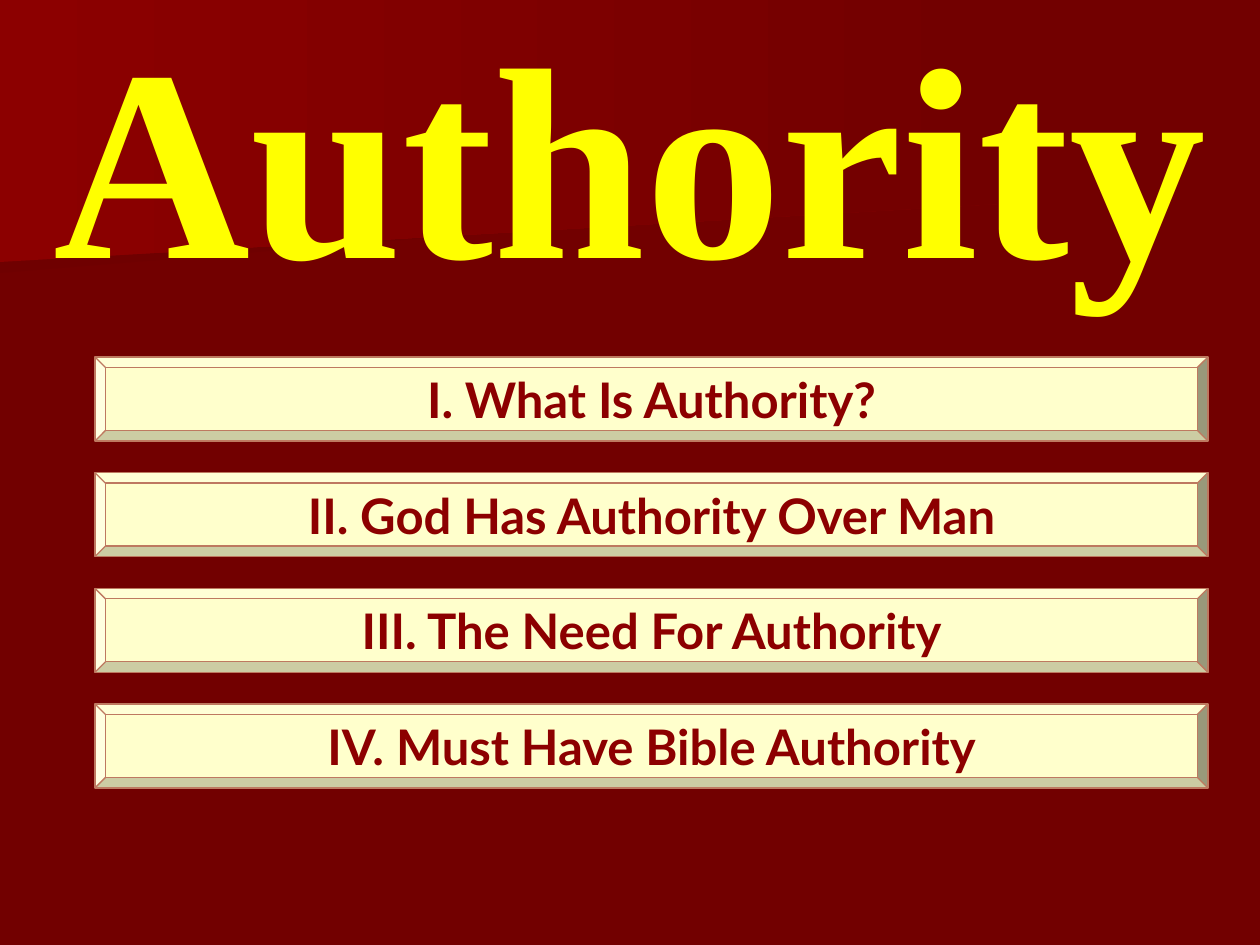
from pptx import Presentation
from pptx.dml.color import RGBColor
from pptx.enum.shapes import MSO_SHAPE as Shape
from pptx.enum.text import MSO_ANCHOR as Anchor, MSO_AUTO_SIZE as AutoSize, PP_ALIGN as Align
from pptx.util import Emu, Pt

TITLE = "Authority"
POINTS = [
    "I. What Is Authority?",
    "II. God Has Authority Over Man",
    "III. The Need For Authority",
    "IV. Must Have Bible Authority",
]
COLORS = {
    "ground": "720000", "shade": "6F0000", "red": "8C0000",
    "yellow": "FFFF00", "cream": "FFFFCC", "edge": "BE7960",
}

# Layout in px, 126 to the inch
PX = 914400 // 126
WIDTH, HEIGHT = 1260, 945
TITLE_BOX = (32, -21, 1196, 340)
BAR_LEFT, BAR_WIDTH, BAR_HEIGHT = 95, 1113, 84
FIRST_TOP, LAST_TOP = 357, 704
# Background sweeps: outline and the colour they fade from
SWEEPS = [
    ([(980, 193), (0, 273), (0, 127), (982, 127), (980, 161)], "shade"),
    ([(998, 204), (0, 262), (0, 0), (998, 0)], "red"),
]


def px(*lengths):
    return [Emu(round(length * PX)) for length in lengths]


def color(name):
    return RGBColor.from_string(COLORS[name])


def write(frame, text, font_name, size, color_name):
    paragraph = frame.paragraphs[0]
    paragraph.text = text
    paragraph.alignment = Align.CENTER
    font = paragraph.font
    font.name, font.size, font.bold = font_name, Pt(size), True
    font.color.rgb = color(color_name)
    return paragraph


prs = Presentation()
prs.slide_width, prs.slide_height = px(WIDTH, HEIGHT)
slide = prs.slides.add_slide(prs.slide_layouts[6])
shapes = slide.shapes

# Background
slide.background.fill.solid()
slide.background.fill.fore_color.rgb = color("ground")
for outline, start in SWEEPS:
    builder = shapes.build_freeform(*outline[0], scale=PX)
    builder.add_line_segments(outline[1:], close=True)
    sweep = builder.convert_to_shape()
    sweep.shadow.inherit = False
    sweep.line.fill.background()
    sweep.fill.gradient()
    sweep.fill.gradient_angle = 0
    for stop, name in zip(sweep.fill.gradient_stops, (start, "ground")):
        stop.color.rgb = color(name)

# Title
title = shapes.add_textbox(*px(*TITLE_BOX)).text_frame
title.word_wrap = True
title.auto_size = AutoSize.SHAPE_TO_FIT_TEXT
write(title, TITLE, "Times New Roman", 156, "yellow").space_before = Pt(17)

# Outline bars
pitch = (LAST_TOP - FIRST_TOP) / (len(POINTS) - 1)
for i, point in enumerate(POINTS):
    place = px(BAR_LEFT, FIRST_TOP + i * pitch, BAR_WIDTH, BAR_HEIGHT)
    bar = shapes.add_shape(Shape.BEVEL, *place)
    bar.shadow.inherit = False
    bar.fill.solid()
    bar.fill.fore_color.rgb = color("cream")
    bar.line.color.rgb = color("edge")
    bar.line.width = Pt(0.75)
    bar.text_frame.word_wrap = False
    bar.text_frame.vertical_anchor = Anchor.MIDDLE
    write(bar.text_frame, point, "Lato", 28, "red")

prs.save("out.pptx")
